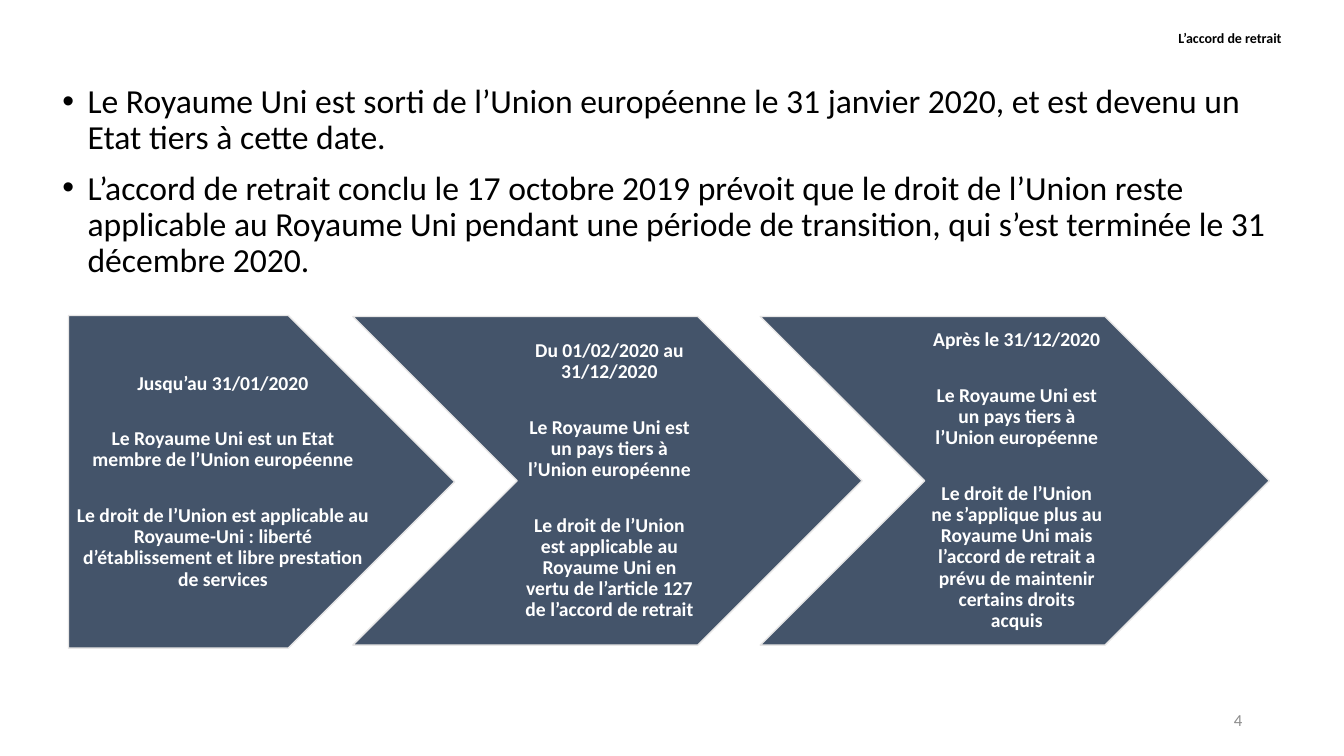
from dataclasses import dataclass

import pptx
import pptx.dml.color
import pptx.enum.shapes
import pptx.enum.text
import pptx.oxml.ns
import pptx.util
from lxml import etree

Inches = pptx.util.Inches
Pt = pptx.util.Pt
Align = pptx.enum.text.PP_ALIGN
Anchor = pptx.enum.text.MSO_ANCHOR
Shape = pptx.enum.shapes.MSO_SHAPE


@dataclass(frozen=True)
class Theme:
    font: str = "Calibri"
    ink: str = "000000"
    grey: str = "8C8C8C"
    navy: str = "44546A"
    edge: str = "E7E6E6"
    white: str = "FFFFFF"
    head: int = 10
    body: int = 24
    step: int = 14
    page: int = 12


THEME = Theme()

POINTS = [
    "Le Royaume Uni est sorti de l’Union européenne le 31 janvier 2020, et est devenu un Etat tiers à cette date.",
    "L’accord de retrait conclu le 17 octobre 2019 prévoit que le droit de l’Union reste applicable au Royaume Uni "
    "pendant une période de transition, qui s’est terminée le 31 décembre 2020.",
]

THIRD = "Le Royaume Uni est un pays tiers à l’Union européenne"

FIRST = [
    "Jusqu’au 31/01/2020",
    "Le Royaume Uni est un Etat membre de l’Union européenne",
    "Le droit de l’Union est applicable au Royaume-Uni : liberté d’établissement et libre prestation de services",
]

LATER = [
    [
        "Du 01/02/2020 au 31/12/2020",
        THIRD,
        "Le droit de l’Union est applicable au Royaume Uni en vertu de l’article 127 de l’accord de retrait",
    ],
    [
        "Après le 31/12/2020",
        THIRD,
        "Le droit de l’Union ne s’applique plus au Royaume Uni mais l’accord de retrait a prévu de maintenir "
        "certains droits acquis",
    ],
]


def paint(name):
    return pptx.dml.color.RGBColor.from_string(name)


def place(shape, box):
    shape.left, shape.top, shape.width, shape.height = map(Inches, box)


def bullet(para):
    props = para._p.get_or_add_pPr()
    props.set("marL", str(Inches(0.25)))
    props.set("indent", str(Inches(-0.25)))
    etree.SubElement(props, pptx.oxml.ns.qn("a:buFont"), typeface="Arial")
    etree.SubElement(props, pptx.oxml.ns.qn("a:buChar"), char="•")


def write(frame, lines, size, color, align, bold=False, gap=0, anchor=Anchor.TOP, dots=False):
    frame.word_wrap = True
    frame.auto_size = pptx.enum.text.MSO_AUTO_SIZE.NONE
    frame.vertical_anchor = anchor
    for index, line in enumerate(lines):
        para = frame.add_paragraph() if index else frame.paragraphs[0]
        para.text = line
        para.alignment = align
        para.line_spacing = 0.9
        para.space_before = Pt(gap if index else 0)
        if dots:
            bullet(para)
        for run in para.runs:
            run.font.name = THEME.font
            run.font.size = Pt(size)
            run.font.bold = bold
            run.font.color.rgb = paint(color)


def add_text(slide, box, lines, *style, **more):
    frame = slide.shapes.add_textbox(*map(Inches, box)).text_frame
    write(frame, lines, *style, **more)


def add_step(slide, kind, box, lines, inset):
    shape = slide.shapes.add_shape(kind, *map(Inches, box))
    shape.shadow.inherit = False
    shape.fill.solid()
    shape.fill.fore_color.rgb = paint(THEME.navy)
    shape.line.color.rgb = paint(THEME.edge)
    shape.line.width = Pt(1)
    frame = shape.text_frame
    frame.margin_left, frame.margin_right = Inches(inset), Inches(0.02)
    frame.margin_top = frame.margin_bottom = Inches(0.04)
    write(frame, lines, THEME.step, THEME.white, Align.CENTER, bold=True, gap=24.6, anchor=Anchor.MIDDLE)


def main():
    deck = pptx.Presentation()
    deck.slide_width, deck.slide_height = Inches(13.33), Inches(7.5)
    slide = deck.slides.add_slide(deck.slide_layouts[5])

    title = slide.shapes.title
    place(title, (4.83, 0.26, 7.98, 0.52))
    write(title.text_frame, ["L’accord de retrait"], THEME.head, THEME.ink, Align.RIGHT, bold=True)

    add_text(slide, (0.52, 0.79, 12.28, 6.19), POINTS, THEME.body, THEME.ink, Align.LEFT, gap=10, dots=True)

    add_step(slide, Shape.PENTAGON, (0.68, 3.13, 3.83, 3.3), FIRST, 0.08)
    for index, lines in enumerate(LATER):
        add_step(slide, Shape.CHEVRON, (3.5 + 4.04 * index, 3.14, 5.05, 3.26), lines, 0.06)

    add_text(slide, (9.42, 6.95, 3, 0.4), ["4"], THEME.page, THEME.grey, Align.RIGHT, anchor=Anchor.MIDDLE)
    deck.save("out.pptx")


if __name__ == "__main__":
    main()
